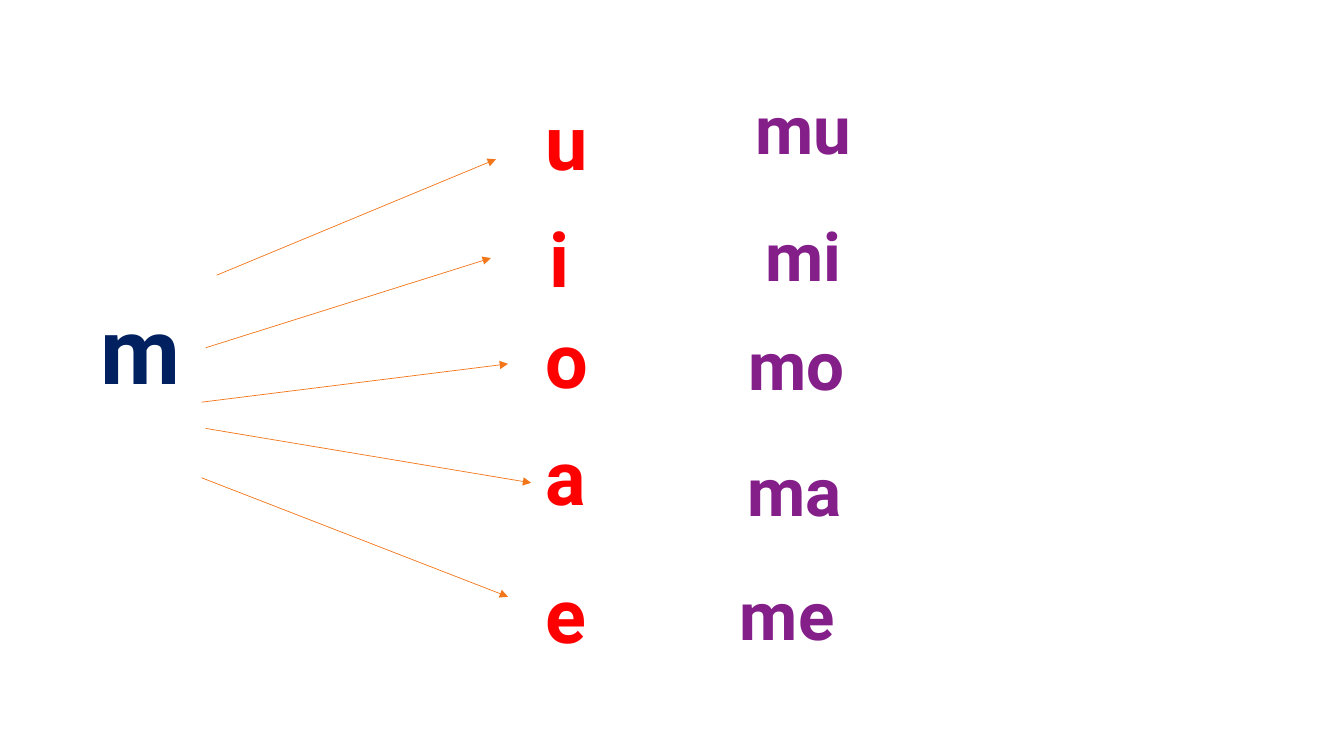
from dataclasses import dataclass

from lxml.etree import SubElement
from pptx import Presentation
from pptx.dml.color import RGBColor
from pptx.enum.shapes import MSO_CONNECTOR
from pptx.enum.text import MSO_AUTO_SIZE, PP_ALIGN
from pptx.oxml.ns import qn
from pptx.util import Inches, Pt


@dataclass(frozen=True)
class Theme:
    """Colours, font and type sizes of the slide."""
    font: str = "Roboto"
    consonant: tuple = (66, "002060")
    vowel: tuple = (54, "FF0000")
    syllable: tuple = (48, "841E89")
    arrow: tuple = (0.5, "F3771A")


class Page:
    """Draws elements on one slide, measured on a 160 by 90 grid."""

    def __init__(self, deck, theme):
        """Add a blank slide and work out its grid."""
        self.theme = theme
        self.slide = deck.slides.add_slide(deck.slide_layouts[6])
        self.column = deck.slide_width / 160
        self.row = deck.slide_height / 90

    def place(self, *lengths):
        """Turn alternating columns and rows into slide lengths."""
        units = (self.column, self.row) * 2
        return [round(length * unit) for length, unit in zip(lengths, units)]

    def letters(self, text, style, area, align=PP_ALIGN.CENTER):
        """Write bold letters in a text box."""
        size, colour = style
        box = self.slide.shapes.add_textbox(*self.place(*area))
        frame = box.text_frame
        frame.word_wrap = True
        frame.auto_size = MSO_AUTO_SIZE.SHAPE_TO_FIT_TEXT
        frame.text = text
        para = frame.paragraphs[0]
        para.alignment = align
        span = para.runs[0]
        span.font.name = self.theme.font
        span.font.size = Pt(size)
        span.font.bold = True
        span.font.color.rgb = RGBColor.from_string(colour)

    def arrow(self, start, end):
        """Draw a thin arrow between two grid points."""
        width, colour = self.theme.arrow
        arrow = self.slide.shapes.add_connector(
            MSO_CONNECTOR.STRAIGHT, *self.place(*start, *end))
        arrow.line.width = Pt(width)
        arrow.line.color.rgb = RGBColor.from_string(colour)
        SubElement(arrow.line._get_or_add_ln(), qn("a:tailEnd"), type="triangle")
        SubElement(arrow._element.spPr, qn("a:effectLst"))


CONSONANT = "m"
VOWELS = [
    ("u", (63.72, 10.68), (25.8, 32.76), (59.04, 18.96), (86.88, 9.84, 17.52)),
    ("i", (64.2, 24.6), (24.48, 41.4), (58.44, 30.72), (86.76, 24.96, 17.76)),
    ("o", (63.72, 36.6), (24, 47.88), (60.48, 43.32), (87.24, 37.92, 15.24)),
    ("a", (63.72, 50.64), (24.48, 51), (63.24, 57.48), (86.88, 52.92, 15.48)),
    ("e", (63.72, 66.96), (24, 56.88), (60.48, 71.04), (86.28, 67.68, 14.88)),
]


def main():
    """Build the syllable slide and save it."""
    deck = Presentation()
    deck.slide_width, deck.slide_height = Inches(13.33), Inches(7.5)
    theme = Theme()
    page = Page(deck, theme)
    page.letters(CONSONANT, theme.consonant, (7.44, 34.2, 18.48, 14.52))
    for vowel, corner, start, end, syllable_area in VOWELS:
        page.letters(vowel, theme.vowel, (*corner, 8.4, 12.12), PP_ALIGN.LEFT)
        page.arrow(start, end)
        page.letters(CONSONANT + vowel, theme.syllable, (*syllable_area, 10.92))
    deck.save("out.pptx")


if __name__ == "__main__":
    main()
